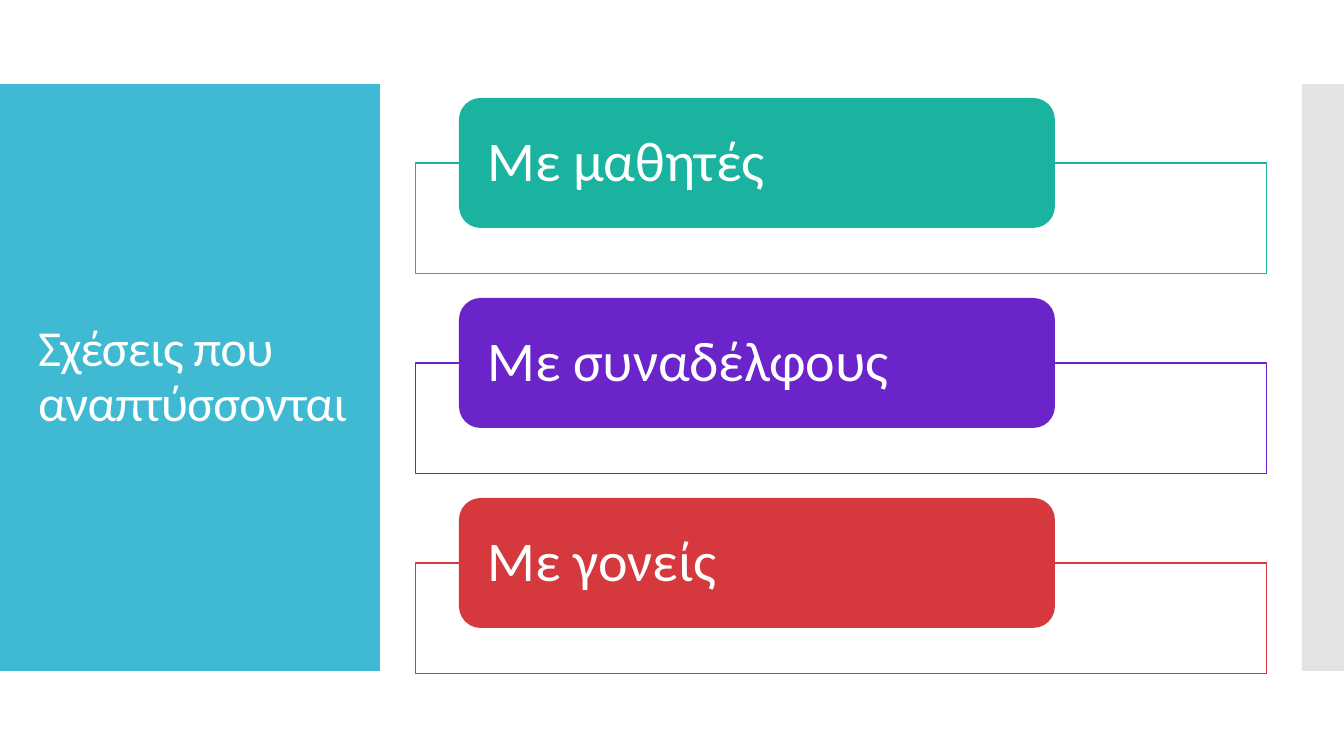
from pptx import Presentation
from pptx.dml.color import RGBColor
from pptx.enum.shapes import MSO_SHAPE
from pptx.enum.text import MSO_ANCHOR, MSO_AUTO_SIZE, PP_ALIGN
from pptx.oxml.ns import qn
from pptx.util import Emu, Pt
from lxml.etree import SubElement

THEME = {
    "font": "Calibri",
    "title_size": 36,
    "card_size": 40,
    "white": "FFFFFF",
    "title_panel": "40BAD2",
    "edge_panel": "C8C8C8",
    "cards": ["1AB39F", "6A24CA", "D5393D"],
}
EMU_PER_PX = 914400 / 100.8
CARD_PITCH = 200


def add_block(kind, box, color, opacity=100):
    shape = slide.shapes.add_shape(kind, *[Emu(round(v * EMU_PER_PX)) for v in box])
    shape.shadow.inherit = False
    shape.line.fill.background()
    shape.fill.solid()
    shape.fill.fore_color.rgb = RGBColor.from_string(color)
    if opacity < 100:
        color_element = shape.element.spPr.find(qn("a:solidFill"))[0]
        SubElement(color_element, qn("a:alpha"), val=str(opacity * 1000))
    return shape


def write_text(shape, text, size, side_inset, end_inset):
    frame = shape.text_frame
    frame.word_wrap = True
    frame.auto_size = MSO_AUTO_SIZE.NONE
    frame.vertical_anchor = MSO_ANCHOR.MIDDLE
    frame.margin_left = frame.margin_right = Emu(round(side_inset * EMU_PER_PX))
    frame.margin_top = frame.margin_bottom = Emu(round(end_inset * EMU_PER_PX))
    paragraph = frame.paragraphs[0]
    paragraph.alignment = PP_ALIGN.LEFT
    paragraph.line_spacing = 0.9
    paragraph.space_before = Pt(0)
    run = paragraph.add_run()
    run.text = text
    run.font.name = THEME["font"]
    run.font.size = Pt(size)
    run.font.color.rgb = RGBColor.from_string(THEME["white"])
    return run


presentation = Presentation()
presentation.slide_width = Emu(round(1344 * EMU_PER_PX))
presentation.slide_height = Emu(round(756 * EMU_PER_PX))
slide = presentation.slides.add_slide(presentation.slide_layouts[5])

add_block(MSO_SHAPE.RECTANGLE, (0, 84, 380, 587), THEME["title_panel"])
add_block(MSO_SHAPE.RECTANGLE, (1302, 84, 42, 587), THEME["edge_panel"], 50)

title = slide.shapes.title
title.left, title.top, title.width, title.height = [
    Emu(round(v * EMU_PER_PX)) for v in (28, 124, 353, 507)
]
title_run = write_text(title, "Σχέσεις που αναπτύσσονται", THEME["title_size"], 10, 5)
title_run.font._element.set("spc", "-60")
title.element.getparent().append(title.element)

labels = ["Με μαθητές", "Με συναδέλφους", "Με γονείς"]
for index, (label, color) in enumerate(zip(labels, THEME["cards"])):
    offset = index * CARD_PITCH
    outline = add_block(MSO_SHAPE.RECTANGLE, (416, 163 + offset, 851, 111), THEME["white"], 90)
    outline.line.color.rgb = RGBColor.from_string(color)
    outline.line.width = Pt(0.75)
    card = add_block(MSO_SHAPE.ROUNDED_RECTANGLE, (459, 98 + offset, 596, 130), color)
    write_text(card, label, THEME["card_size"], 22, 0)

presentation.save("out.pptx")
